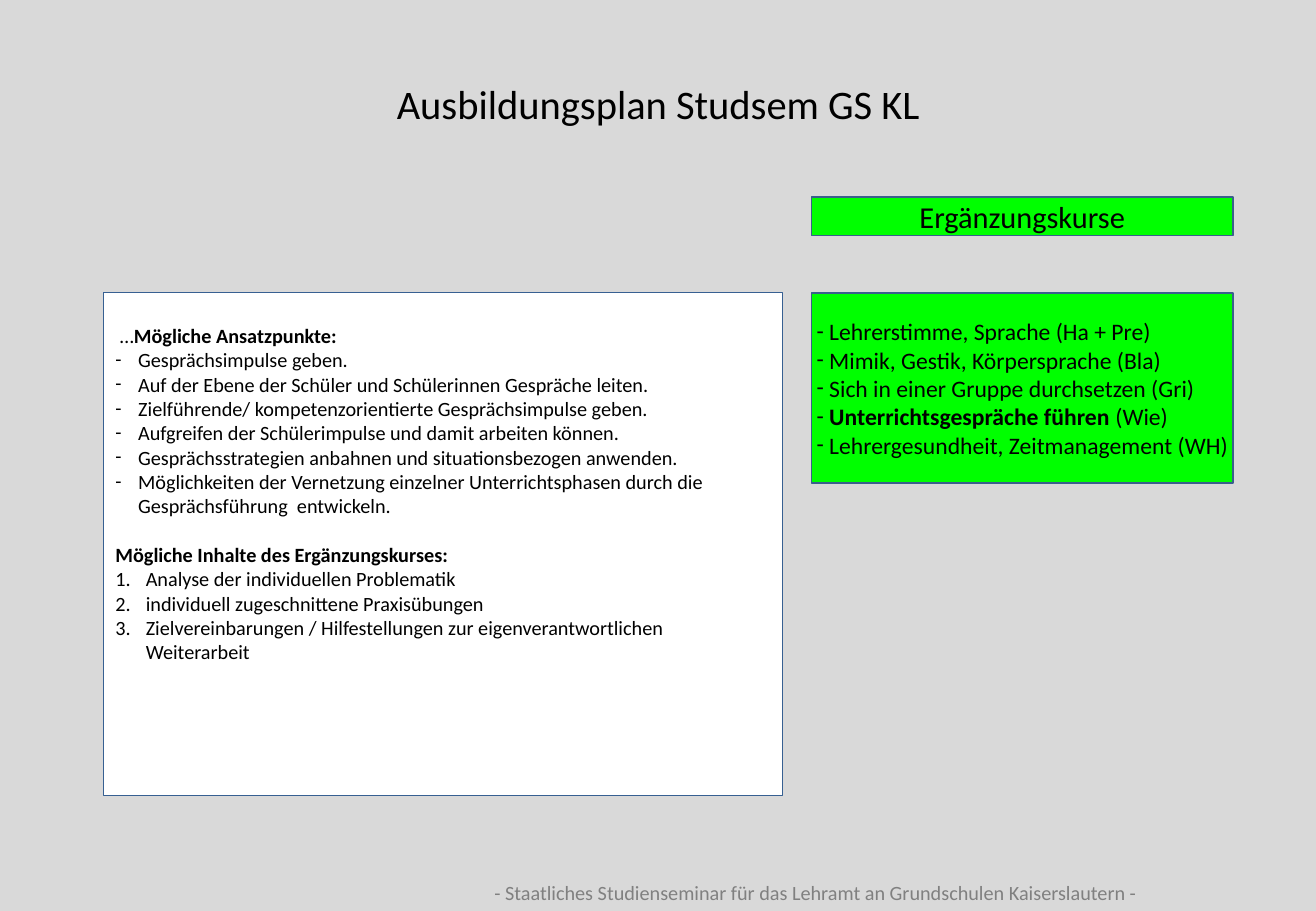
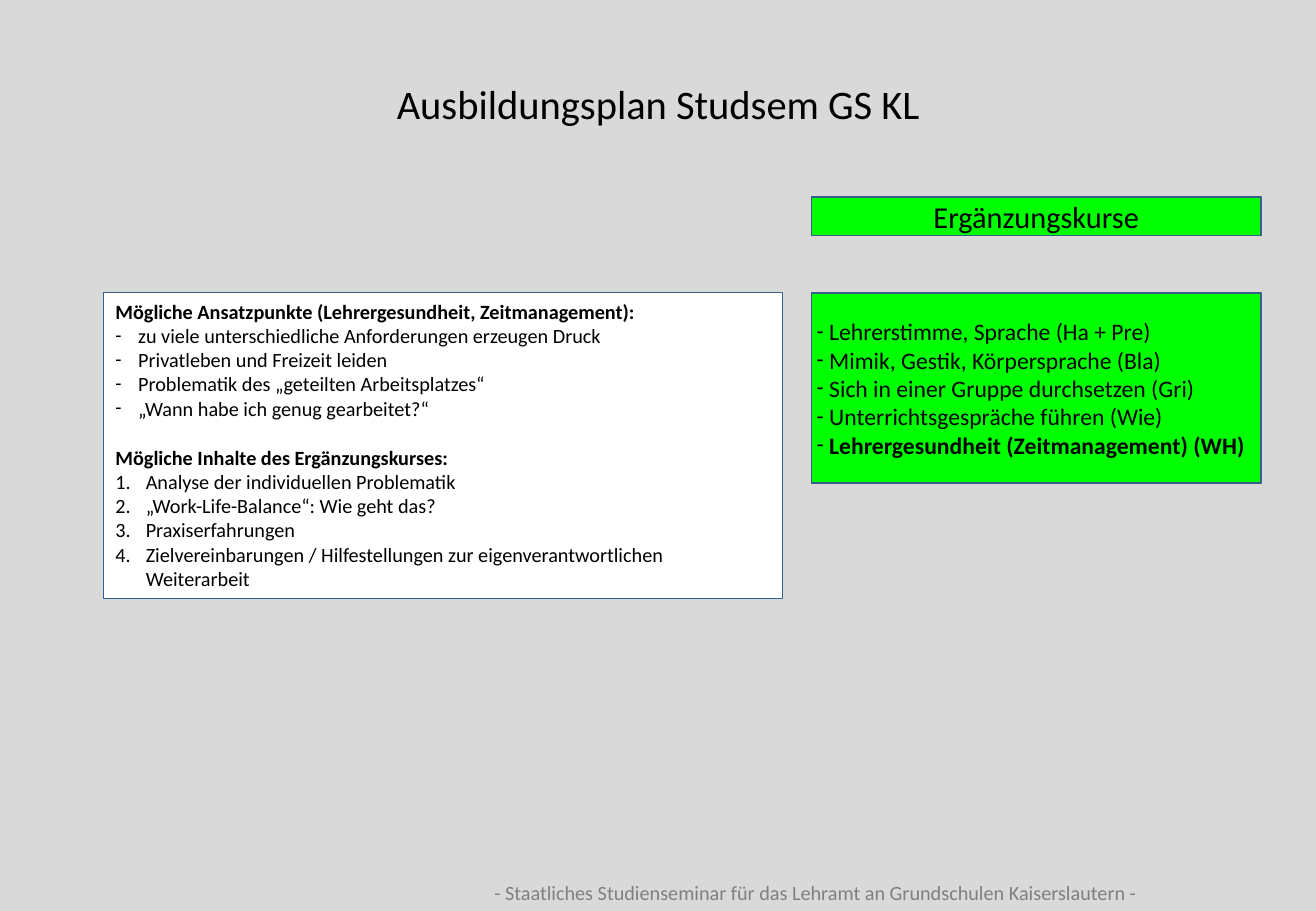
from lxml.etree import SubElement
from pptx import Presentation
from pptx.dml.color import RGBColor
from pptx.enum.shapes import MSO_SHAPE as SHAPE
from pptx.enum.text import MSO_ANCHOR as ANCHOR, MSO_AUTO_SIZE as AUTO, PP_ALIGN as ALIGN
from pptx.oxml.ns import qn
from pptx.util import Pt

FONT = "Calibri"
COLORS = {"background": "D9D9D9", "text": "000000", "footer": "808080", "panel": "FFFFFF",
          "panel_line": "376092", "course": "00FF00", "course_line": "3A5F8C"}

TITLE = "Ausbildungsplan Studsem GS KL"
FOOTER = "- Staatliches Studienseminar für das Lehramt an Grundschulen Kaiserslautern -"
COURSE_HEADING = "Ergänzungskurse"
CONTENTS_HEADING = "**Mögliche Inhalte des Ergänzungskurses:**"
ANALYSIS = "Analyse der individuellen Problematik"
AGREEMENTS = "Zielvereinbarungen / Hilfestellungen zur eigenverantwortlichen Weiterarbeit"
COMMON_COURSES = ["Lehrerstimme, Sprache (Ha + Pre)", "Mimik, Gestik, Körpersprache (Bla)",
                  "Sich in einer Gruppe durchsetzen (Gri)"]

# Text between double asterisks is bold
SLIDES = [
    {"heading": " …**Mögliche Ansatzpunkte:**",
     "points": ["Gesprächsimpulse geben.",
                "Auf der Ebene der Schüler und Schülerinnen Gespräche leiten.",
                "Zielführende/ kompetenzorientierte Gesprächsimpulse geben.",
                "Aufgreifen der Schülerimpulse und damit arbeiten können.",
                "Gesprächsstrategien anbahnen und situationsbezogen anwenden.",
                "Möglichkeiten der Vernetzung einzelner Unterrichtsphasen durch die "
                "Gesprächsführung  entwickeln."],
     "contents": [ANALYSIS, "individuell zugeschnittene Praxisübungen", AGREEMENTS],
     "courses": COMMON_COURSES + ["**Unterrichtsgespräche führen **(Wie)",
                                  "Lehrergesundheit, Zeitmanagement (WH)"],
     "panel_height": 298, "panel_inset": 18.2, "course_width": 249.8},
    {"heading": "**Mögliche Ansatzpunkte (Lehrergesundheit, Zeitmanagement):**",
     "points": ["zu viele unterschiedliche Anforderungen erzeugen Druck",
                "Privatleben und Freizeit leiden",
                "Problematik des „geteilten Arbeitsplatzes“",
                "„Wann habe ich genug gearbeitet?“"],
     "contents": [ANALYSIS, "„Work-Life-Balance“: Wie geht das?", "Praxiserfahrungen", AGREEMENTS],
     "courses": COMMON_COURSES + ["Unterrichtsgespräche führen (Wie)",
                                  "**Lehrergesundheit (Zeitmanagement) (WH)**"],
     "panel_height": 181.4, "panel_inset": 3.6, "course_width": 266.4},
]

PANEL_LEFT, COURSE_LEFT = 61.2, 481
HEADING_TOP, CONTENT_TOP = 116.6, 173.5
SECTION_GAP = 14.6


def rgb(name):
    return RGBColor.from_string(COLORS[name])


def place(sp, *box):
    sp.left, sp.top, sp.width, sp.height = map(Pt, box)


def paint(sp, fill, line, width):
    sp.fill.solid()
    sp.fill.fore_color.rgb = rgb(fill)
    sp.line.color.rgb = rgb(line)
    sp.line.width = Pt(width)


def set_bullet(p, kind, indent):
    """Give p a dash, a number or no bullet, with a hanging indent in points."""
    pPr = p._p.get_or_add_pPr()
    pPr.set("marL", str(Pt(indent)))
    pPr.set("indent", str(-Pt(indent)))
    if kind == "dash":
        SubElement(pPr, qn("a:buFont"), typeface=FONT)
        SubElement(pPr, qn("a:buChar"), char="-")
    elif kind == "number":
        SubElement(pPr, qn("a:buFont"), typeface=FONT)
        SubElement(pPr, qn("a:buAutoNum"), type="arabicPeriod")
    else:
        SubElement(pPr, qn("a:buNone"))


def write(tf, items, size, align=ALIGN.LEFT, color="text"):
    """Fill tf with (text, bullet kind, indent, space before) items."""
    tf.word_wrap = True
    tf.auto_size = AUTO.NONE
    for i, (text, kind, indent, gap) in enumerate(items):
        p = tf.add_paragraph() if i else tf.paragraphs[0]
        p.alignment = align
        p.space_before = Pt(gap)
        set_bullet(p, kind, indent)
        for j, part in enumerate(text.split("**")):
            if part:
                r = p.add_run()
                r.text = part
                r.font.name, r.font.size = FONT, Pt(size)
                r.font.bold = j % 2 == 1
                r.font.color.rgb = rgb(color)


def write_line(tf, text, size, color="text"):
    write(tf, [(text, None, 0, 0)], size, ALIGN.CENTER, color)


def add_course_box(s, top, width, height):
    sp = s.shapes.add_shape(SHAPE.RECTANGLE, Pt(COURSE_LEFT), Pt(top), Pt(width), Pt(height))
    sp.shadow.inherit = False
    paint(sp, "course", "course_line", 1)
    sp.text_frame.vertical_anchor = ANCHOR.MIDDLE
    return sp.text_frame


def build_slide(prs, data):
    s = prs.slides.add_slide(prs.slide_layouts[1])
    title, panel = s.placeholders
    place(title, 112.3, 43.2, 555.8, 36)
    write_line(title.text_frame, TITLE, 24)

    place(panel, PANEL_LEFT, CONTENT_TOP, 402.5, data["panel_height"])
    paint(panel, "panel", "panel_line", 0.75)
    panel.text_frame.margin_top = Pt(data["panel_inset"])
    write(panel.text_frame,
          [(data["heading"], None, 0, 0)]
          + [(text, "dash", 13.5, 0) for text in data["points"]]
          + [(CONTENTS_HEADING, None, 0, SECTION_GAP)]
          + [(text, "number", 18, 0) for text in data["contents"]], 12)

    footer = s.shapes.add_textbox(Pt(247), Pt(518.4), Pt(473), Pt(21.6))
    write_line(footer.text_frame, FOOTER, 12, "footer")

    tf = add_course_box(s, CONTENT_TOP, data["course_width"], 113)
    tf.margin_left = tf.margin_top = tf.margin_bottom = Pt(3)
    tf.margin_right = 0
    write(tf, [(text, "dash", 7.5, 0) for text in data["courses"]], 14)
    write_line(add_course_box(s, HEADING_TOP, data["course_width"], 23), COURSE_HEADING, 18)


def main():
    prs = Presentation()
    prs.slide_width, prs.slide_height = Pt(780), Pt(540)
    fill = prs.slide_master.background.fill
    fill.solid()
    fill.fore_color.rgb = rgb("background")
    for data in SLIDES:
        build_slide(prs, data)
    prs.save("out.pptx")


if __name__ == "__main__":
    main()
